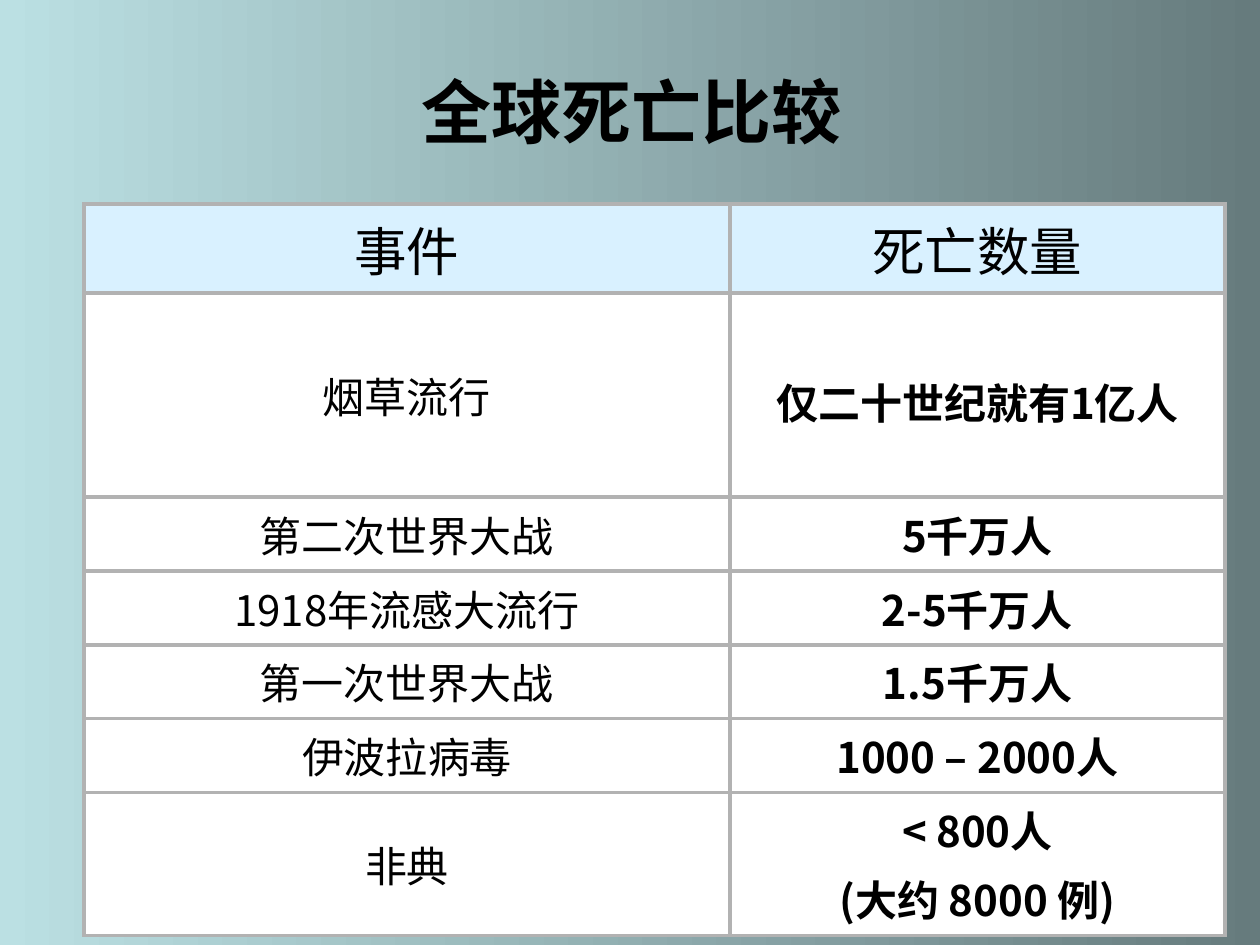
from lxml import etree
from pptx import Presentation
from pptx.dml.color import RGBColor
from pptx.enum.lang import MSO_LANGUAGE_ID
from pptx.enum.text import MSO_ANCHOR, PP_ALIGN
from pptx.oxml.ns import qn
from pptx.util import Pt

PX = 914400 // 126
BLACK = RGBColor(0x00, 0x00, 0x00)
WHITE = RGBColor(0xFF, 0xFF, 0xFF)
HEADER_BLUE = RGBColor(0xD9, 0xF1, 0xFF)
BORDER_GREY = RGBColor(0xB2, 0xB2, 0xB2)
PALE_TEAL = RGBColor(0xBB, 0xE0, 0xE3)
DARK_TEAL = RGBColor(0x66, 0x7B, 0x7D)
CENTER = PP_ALIGN.CENTER
MIDDLE = MSO_ANCHOR.MIDDLE
CHINESE = MSO_LANGUAGE_ID.SIMPLIFIED_CHINESE

TITLE_FONT = {"name": "Arial", "size": Pt(40), "bold": True}
HEADER_FONT = {"name": "Arial", "size": Pt(30), "bold": False}
EVENT_FONT = {"name": "Noto Sans CJK SC", "size": Pt(24), "bold": False}
DEATHS_FONT = {**EVENT_FONT, "bold": True}

COLUMN_WIDTHS = [646, 495]
ROWS = [
    (89, "事件", "死亡数量"),
    (204, "烟草流行", "仅二十世纪就有1亿人"),
    (74, "第二次世界大战", "5千万人"),
    (74, "1918年流感大流行", "2-5千万人"),
    (73, "第一次世界大战", "1.5千万人"),
    (74, "伊波拉病毒", "1000 – 2000人"),
    (143, "非典", "< 800人\n(大约 8000 例)"),
]


def write_centered(frame, text, font_values):
    frame.text = text
    for number, para in enumerate(frame.paragraphs):
        para.alignment = CENTER
        para.space_before = Pt(4.8 if number else 0)
        for span in para.runs:
            span.font.color.rgb = BLACK
            span.font.language_id = CHINESE
            for name, value in font_values.items():
                setattr(span.font, name, value)


def add_borders(cell):
    properties = cell._tc.get_or_add_tcPr()
    for position, side in enumerate(("lnL", "lnR", "lnT", "lnB")):
        line = etree.Element(qn(f"a:{side}"), w=str(Pt(2.25)))
        fill = etree.SubElement(line, qn("a:solidFill"))
        etree.SubElement(fill, qn("a:srgbClr"), val=str(BORDER_GREY))
        properties.insert(position, line)


deck = Presentation()
deck.slide_width = 1260 * PX
deck.slide_height = 945 * PX
page = deck.slides.add_slide(deck.slide_layouts[5])

background = page.background.fill
background.gradient()
background.gradient_angle = 0
for stop, position, color in zip(background.gradient_stops, (0, 1), (PALE_TEAL, DARK_TEAL)):
    stop.position = position
    stop.color.rgb = color

title = page.shapes.title
for name, value in {"left": 121, "top": 38, "width": 1021, "height": 145}.items():
    setattr(title, name, value * PX)
title.text_frame.vertical_anchor = MIDDLE
write_centered(title.text_frame, "全球死亡比较", TITLE_FONT)

table_height = sum(height for height, *_ in ROWS)
table = page.shapes.add_table(
    len(ROWS), len(COLUMN_WIDTHS), 84 * PX, 204 * PX,
    sum(COLUMN_WIDTHS) * PX, table_height * PX,
).table
table.first_row = False
table.horz_banding = False
for column, width in zip(table.columns, COLUMN_WIDTHS):
    column.width = width * PX

for row_number, (height, *texts) in enumerate(ROWS):
    table.rows[row_number].height = height * PX
    fonts = (EVENT_FONT, DEATHS_FONT) if row_number else (HEADER_FONT, HEADER_FONT)
    for column_number, (text, font_values) in enumerate(zip(texts, fonts)):
        cell = table.cell(row_number, column_number)
        cell.vertical_anchor = MIDDLE
        cell.fill.solid()
        cell.fill.fore_color.rgb = WHITE if row_number else HEADER_BLUE
        write_centered(cell.text_frame, text, font_values)
        add_borders(cell)

# The tobacco figure sits slightly below the middle of its row.
table.cell(1, 1).margin_top = 18 * PX

deck.save("out.pptx")
